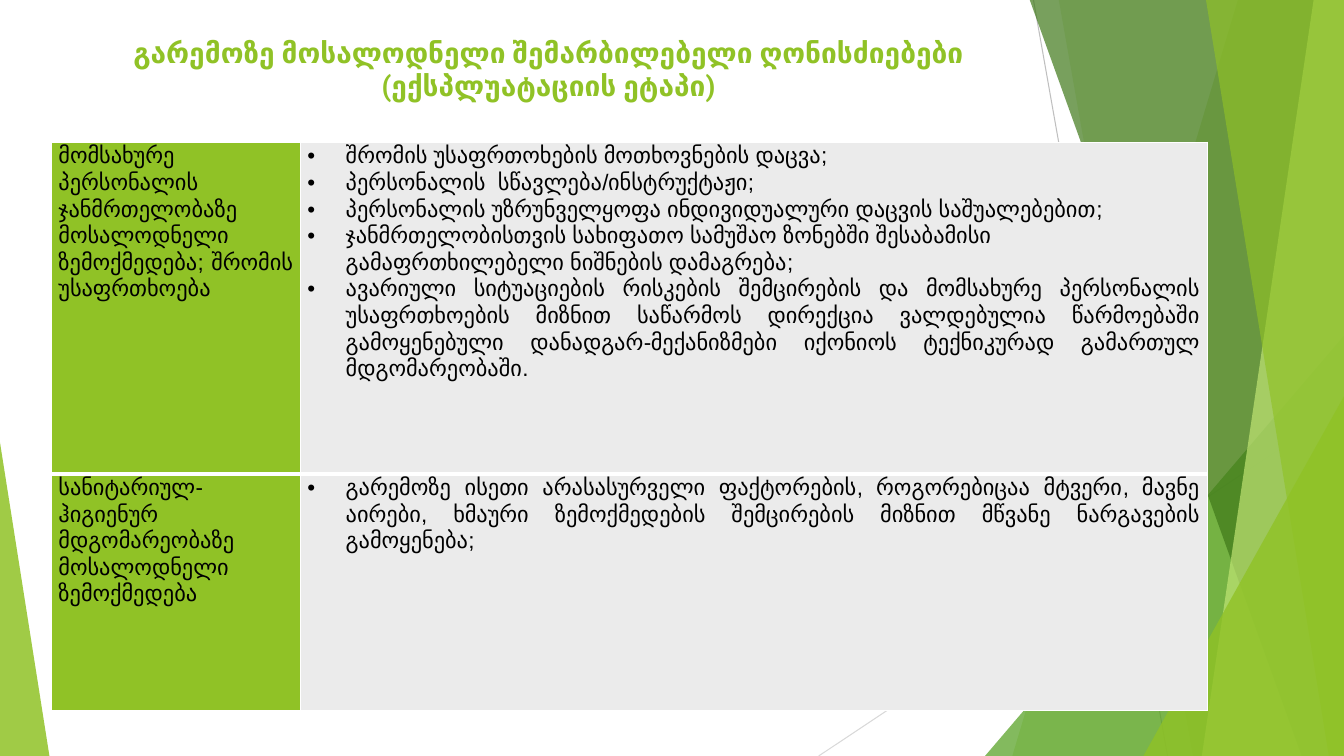
"""Builds the slide on mitigation measures during the operation stage."""
from lxml.etree import SubElement
from pptx import Presentation
from pptx.dml.color import RGBColor
from pptx.enum.shapes import MSO_CONNECTOR, MSO_SHAPE
from pptx.enum.text import MSO_ANCHOR, PP_ALIGN
from pptx.oxml import parse_xml
from pptx.oxml.ns import nsdecls, qn
from pptx.util import Inches, Pt

COLORS = {
    "lime": "90C226", "green": "54A021", "forest": "3F7819", "pale": "C0E474",
    "gray": "BFBFBF", "silver": "D9D9D9", "cell": "EBEBEB",
    "white": "FFFFFF", "black": "000000",
}


def paint(sp, color, opacity):
    """Give a shape a translucent fill with no line or shadow."""
    sp.shadow.inherit = False
    sp.line.fill.background()
    sp.fill.solid()
    sp.fill.fore_color.rgb = RGBColor.from_string(COLORS[color])
    clr = sp.fill._xPr.find(qn("a:solidFill"))[0]
    SubElement(clr, qn("a:alpha")).set("val", str(opacity * 1000))


def add_text(p, text, size, font, color, bold=False):
    """Add one formatted run to a paragraph."""
    r = p.add_run()
    r.text = text
    r.font.size = Pt(size)
    r.font.name = font
    r.font.bold = bold
    r.font.color.rgb = RGBColor.from_string(COLORS[color])


prs = Presentation()
prs.slide_width, prs.slide_height = Inches(13.33), Inches(7.5)
s = prs.slides.add_slide(prs.slide_layouts[6])

for x1, y1, x2, y2, color in [
    (10.25, 0, 11.58, 7.5, "gray"),
    (13.33, 4.03, 8.12, 7.5, "silver"),
]:
    line = s.shapes.add_connector(
        MSO_CONNECTOR.STRAIGHT, Inches(x1), Inches(y1), Inches(x2), Inches(y2))
    line.line.width = Pt(0.75)
    line.line.color.rgb = RGBColor.from_string(COLORS[color])
    SubElement(line._element.spPr, qn("a:effectLst"))

bands = [
    ("band", (12.28, 10.04), "lime", 30),
    ("band", (10.5, 11.83), "lime", 20),
    ("triangle", (9.77, 3.33, 3.56, 4.17, 1), "green", 72),
    ("band", (10.21, 12.91), "forest", 70),
    ("band", (13.03, 11.92), "pale", 70),
    ("band", (11.96, 13.18), "lime", 65),
    ("triangle", (11.34, 3.93, 1.99, 3.57, 1), "lime", 80),
    ("triangle", (0, 4.39, 0.49, 3.11, 0), "lime", 85),
]
for kind, place, color, opacity in bands:
    if kind == "band":
        top_x, bottom_x = place
        fb = s.shapes.build_freeform(Inches(top_x), Inches(-0.01))
        fb.add_line_segments([
            (Inches(x), Inches(y))
            for x, y in [(13.33, -0.01), (13.33, 7.5), (bottom_x, 7.5)]])
        sp = fb.convert_to_shape()
    else:
        *box, apex = place
        sp = s.shapes.add_shape(MSO_SHAPE.ISOSCELES_TRIANGLE, *map(Inches, box))
        sp.adjustments[0] = apex
    paint(sp, color, opacity)

title = s.shapes.add_textbox(Inches(0.74), Inches(0.3), Inches(9.4), Inches(0.43))
tf = title.text_frame
tf.word_wrap = True
tf.vertical_anchor = MSO_ANCHOR.TOP
tf.paragraphs[0].alignment = PP_ALIGN.CENTER
add_text(tf.paragraphs[0],
         "გარემოზე მოსალოდნელი შემარბილებელი ღონისძიებები (ექსპლუატაციის ეტაპი)",
         20, "Roboto", "lime", True)

LEFT, JUSTIFY = PP_ALIGN.LEFT, PP_ALIGN.JUSTIFY
rows = [
    ([("მომსახურე პერსონალის ჯანმრთელობაზე მოსალოდნელი ზემოქმედება; შრომის უსაფრთხოება", JUSTIFY)],
     [("შრომის უსაფრთოხების მოთხოვნების დაცვა;", LEFT),
      ("პერსონალის  სწავლება/ინსტრუქტაჟი;", LEFT),
      ("პერსონალის უზრუნველყოფა ინდივიდუალური დაცვის საშუალებებით;", LEFT),
      ("ჯანმრთელობისთვის სახიფათო სამუშაო ზონებში შესაბამისი გამაფრთხილებელი ნიშნების დამაგრება;", LEFT),
      ("ავარიული სიტუაციების რისკების შემცირების და მომსახურე პერსონალის უსაფრთხოების მიზნით "
       "საწარმოს დირექცია ვალდებულია წარმოებაში გამოყენებული დანადგარ-მექანიზმები იქონიოს "
       "ტექნიკურად გამართულ მდგომარეობაში.", JUSTIFY)]),
    ([("სანიტარიულ-ჰიგიენურ მდგომარეობაზე მოსალოდნელი ზემოქმედება", JUSTIFY)],
     [("გარემოზე ისეთი არასასურველი ფაქტორების, როგორებიცაა მტვერი, მავნე აირები, ხმაური "
       "ზემოქმედების შემცირების მიზნით მწვანე ნარგავების გამოყენება;", JUSTIFY)]),
]
table = s.shapes.add_table(
    2, 2, Inches(0.51), Inches(1.41), Inches(11.47), Inches(5.64)).table
table.first_row = table.horz_banding = False
for column, width in zip(table.columns, (2.47, 9)):
    column.width = Inches(width)
for row, height in zip(table.rows, (3.29, 2.35)):
    row.height = Inches(height)

for i, row in enumerate(rows):
    for j, items in enumerate(row):
        cell = table.cell(i, j)
        cell.margin_left = cell.margin_right = Inches(0.07)
        cell.margin_top = cell.margin_bottom = 0
        cell.vertical_anchor = MSO_ANCHOR.TOP
        cell.fill.solid()
        cell.fill.fore_color.rgb = RGBColor.from_string(COLORS["cell" if j else "lime"])
        tcPr = cell._tc.get_or_add_tcPr()
        divider = "B" if i == 0 else "T"
        for n, side in enumerate("LRTB"):
            width = Pt(3 if side == divider else 1)
            tcPr.insert(n, parse_xml(
                f'<a:ln{side} {nsdecls("a")} w="{width}"><a:solidFill>'
                f'<a:srgbClr val="{COLORS["white"]}"/></a:solidFill></a:ln{side}>'))
        tf = cell.text_frame
        for n, (text, align) in enumerate(items):
            p = tf.add_paragraph() if n else tf.paragraphs[0]
            p.alignment = align
            p.line_spacing = 1.07
            add_text(p, text, 16, "Arial", "black")
            if j == 1:
                pPr = p._p.get_or_add_pPr()
                pPr.set("marL", str(Inches(0.38)))
                pPr.set("indent", str(-Inches(0.38)))
                SubElement(pPr, qn("a:buFont")).set("typeface", "Arial")
                SubElement(pPr, qn("a:buChar")).set("char", "•")

prs.save("out.pptx")
